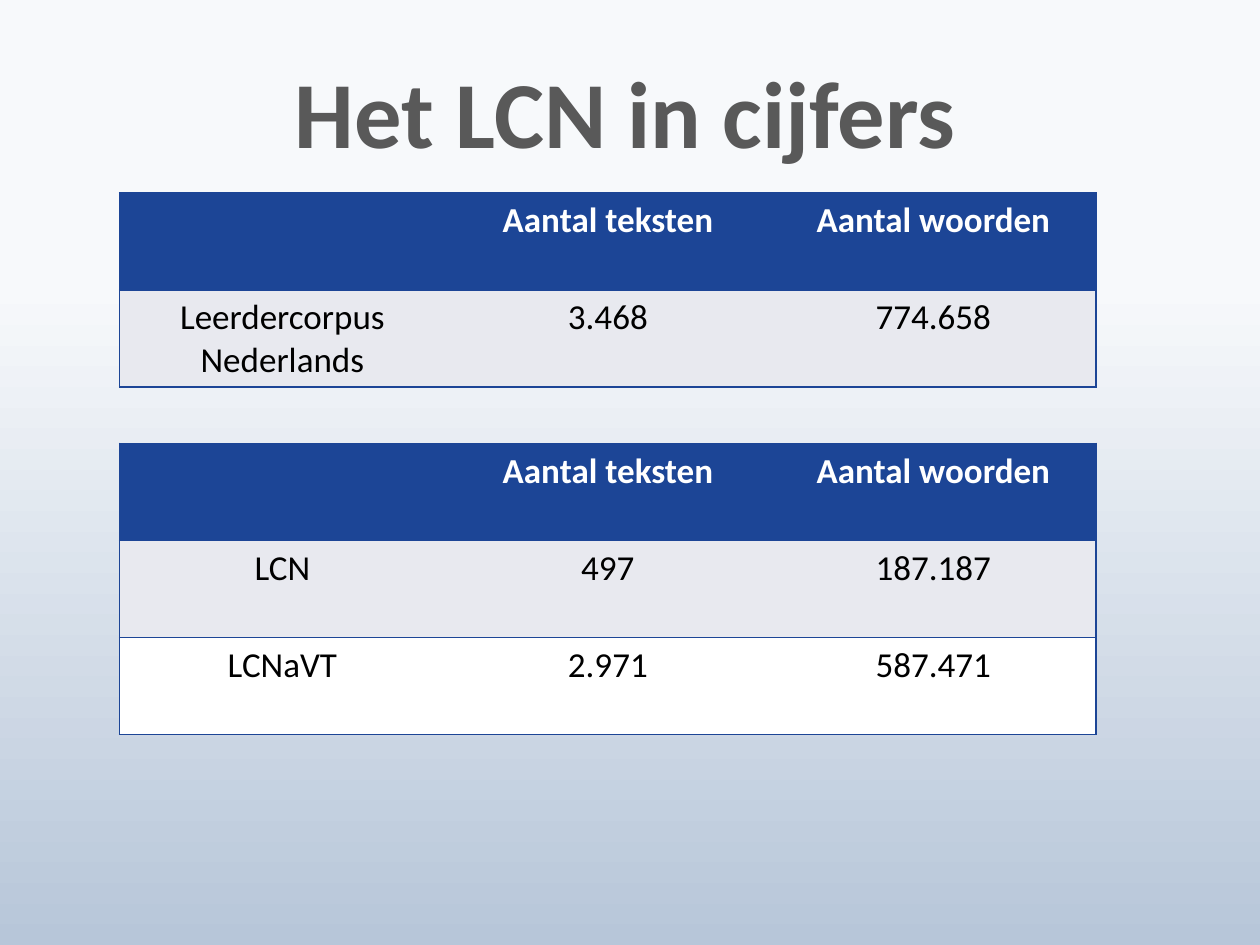
from lxml import etree
from pptx import Presentation
from pptx.dml.color import RGBColor
from pptx.enum.text import MSO_ANCHOR, PP_ALIGN
from pptx.oxml.ns import qn
from pptx.util import Pt

CENTER = PP_ALIGN.CENTER
MIDDLE = MSO_ANCHOR.MIDDLE

# Content
TITLE = "Het LCN in cijfers"
HEAD = ("", "Aantal teksten", "Aantal woorden")
TABLES = [
    (110.2, [HEAD, ("Leerdercorpus Nederlands", "3.468", "774.658")]),
    (253.4, [HEAD, ("LCN", "497", "187.187"), ("LCNaVT", "2.971", "587.471")]),
]

# Format values
BLUE = "1C4596"
FILLS = (BLUE, "E8E9EF", "FFFFFF")
STOPS = ((0.3, "F7F9FB"), (1, "B7C6D9"))
LEFT, COL, ROW = 68.4, 186, 55.44
TITLE_FONT = {"name": "Calibri", "size": Pt(54), "bold": True}
HEAD_FONT = {"name": "Calibri", "size": Pt(20), "bold": True}
BODY_FONT = {**HEAD_FONT, "bold": False}


def rgb(code):
    return RGBColor.from_string(code)


def write(para, text, font, color):
    para.alignment = CENTER
    if text:
        para.add_run().text = text
    for key, value in font.items():
        setattr(para.font, key, value)
        for run in para.runs:
            setattr(run.font, key, value)
    for run in para.runs:
        run.font.color.rgb = rgb(color)


def border(cell, sides):
    """Draw the named sides in blue and clear the others."""
    props = cell._tc.get_or_add_tcPr()
    for spot, side in enumerate("LRTB"):
        line = etree.Element(qn(f"a:ln{side}"), w=str(Pt(1)))
        if side in sides:
            fill = etree.SubElement(line, qn("a:solidFill"))
            etree.SubElement(fill, qn("a:srgbClr"), val=BLUE)
        else:
            etree.SubElement(line, qn("a:noFill"))
        props.insert(spot, line)


def add_grid(slide, top, rows):
    cols = len(rows[0])
    frame = slide.shapes.add_table(len(rows), cols, Pt(LEFT), Pt(top),
                                   Pt(COL * cols), Pt(ROW * len(rows)))
    table = frame.table
    for col in table.columns:
        col.width = Pt(COL)
    for r, row in enumerate(rows):
        table.rows[r].height = Pt(ROW)
        for c, text in enumerate(row):
            cell = table.cell(r, c)
            cell.fill.solid()
            cell.fill.fore_color.rgb = rgb(FILLS[r])
            font, color = (BODY_FONT, "000000") if r else (HEAD_FONT, "FFFFFF")
            write(cell.text_frame.paragraphs[0], text, font, color)
            ends = ("L" if c == 0 else "") + ("R" if c == cols - 1 else "")
            border(cell, "TB" + ends)


def main():
    prs = Presentation()
    prs.slide_width, prs.slide_height = Pt(720), Pt(540)
    slide = prs.slides.add_slide(prs.slide_layouts[6])

    # Background
    back = slide.background.fill
    back.gradient()
    back.gradient_angle = 270
    for stop, (place, color) in zip(back.gradient_stops, STOPS):
        stop.position = place
        stop.color.rgb = rgb(color)

    # Title
    box = slide.shapes.add_textbox(Pt(37.4), Pt(18), Pt(640), Pt(99.4))
    frame = box.text_frame
    frame.word_wrap = True
    frame.vertical_anchor = MIDDLE
    para = frame.paragraphs[0]
    para.line_spacing = Pt(56)
    write(para, TITLE, TITLE_FONT, "595959")

    # Tables
    for top, rows in TABLES:
        add_grid(slide, top, rows)

    prs.save("out.pptx")


if __name__ == "__main__":
    main()
